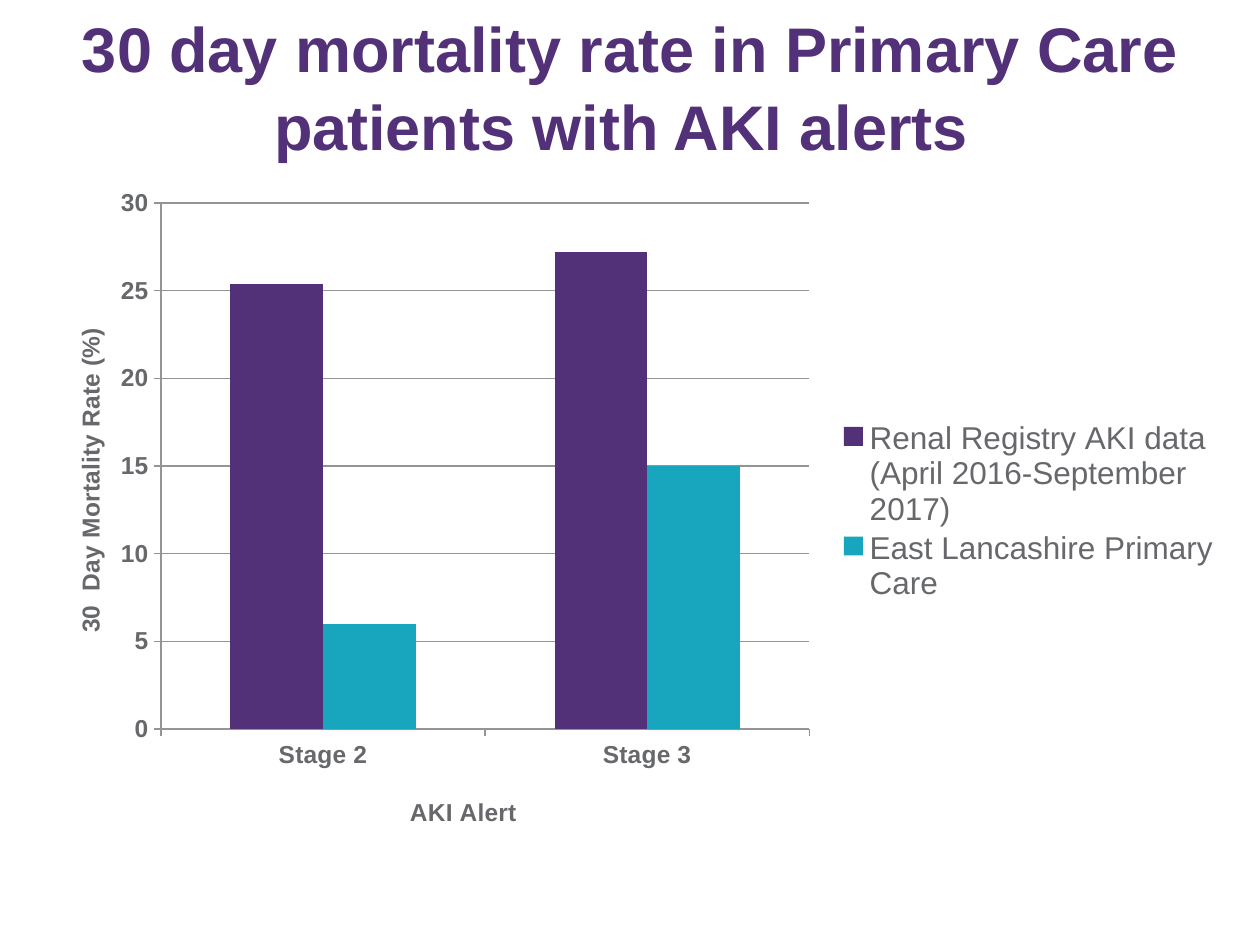
"""Build a slide comparing 30 day mortality after AKI alerts."""
from dataclasses import dataclass

from lxml import etree
from pptx import Presentation
from pptx.chart import data as chart_data
from pptx.dml.color import RGBColor
from pptx.enum import chart as chart_enum, text
from pptx.oxml.ns import qn
from pptx.util import Inches, Pt


@dataclass(frozen=True)
class Theme:
    purple: RGBColor = RGBColor.from_string("523178")
    teal: RGBColor = RGBColor.from_string("17A6BE")
    grey: RGBColor = RGBColor.from_string("67686B")
    rule: RGBColor = RGBColor.from_string("949494")
    face: str = "Arial"
    chart_face: str = "Calibri"
    title: int = 36
    legend: int = 18
    axis: int = 14
    chart: int = 10


@dataclass(frozen=True)
class Series:
    name: str
    values: tuple
    color: RGBColor


@dataclass(frozen=True)
class AxisLabel:
    wording: str
    left: float
    top: float


THEME = Theme()
STAGES = ("Stage 2", "Stage 3")
SERIES = (
    Series("Renal Registry AKI data (April 2016-September 2017)", (25.4, 27.2), THEME.purple),
    Series("East Lancashire Primary Care", (6, 15), THEME.teal),
)
ALERT_LABEL = AxisLabel("AKI Alert", 0.31, 0.92)
RATE_LABEL = AxisLabel("30  Day Mortality Rate (%)", 0.03, 0.22)


def style_font(font, size: int, color: RGBColor, bold: bool = False, face: str = THEME.face) -> None:
    """Apply face, size, weight and colour to a font."""
    font.name, font.size, font.bold = face, Pt(size), bold
    font.color.rgb = color


def place(element, target: str = "", **fractions: float) -> None:
    """Give a chart part a manual layout in fractions of the chart."""
    for old in element.findall(qn("c:layout")):
        element.remove(old)
    layout = etree.Element(qn("c:layout"))
    manual = etree.SubElement(layout, qn("c:manualLayout"))
    settings = {"layoutTarget": target} if target else {}
    settings.update(xMode="edge", yMode="edge", **fractions)
    for name, value in settings.items():
        etree.SubElement(manual, qn(f"c:{name}")).set("val", str(value))
    overlay = element.find(qn("c:overlay"))
    if overlay is None:
        element.insert(0, layout)
    else:
        overlay.addprevious(layout)


def style_axis(axis, label: AxisLabel) -> None:
    """Format an axis with its ticks and title."""
    style_font(axis.tick_labels.font, THEME.axis, THEME.grey, True)
    axis.major_tick_mark = chart_enum.XL_TICK_MARK.OUTSIDE
    axis.format.line.color.rgb = THEME.rule
    axis.format.line.width = Pt(0.75)
    title = axis.axis_title
    title.text_frame.text = label.wording
    style_font(title.text_frame.paragraphs[0].font, THEME.axis, THEME.grey, True)
    place(title._element, x=label.left, y=label.top)


def add_title(page) -> None:
    """Fill and position the slide title."""
    box = page.shapes.title
    box.left, box.top, box.width, box.height = map(Inches, (0.07, 0, 9.86, 0.88))
    frame = box.text_frame
    frame.text = "30 day mortality rate in Primary Care patients with AKI alerts "
    frame.word_wrap = True
    frame.auto_size = text.MSO_AUTO_SIZE.NONE
    frame.vertical_anchor = text.MSO_ANCHOR.TOP
    para = frame.paragraphs[0]
    para.alignment = text.PP_ALIGN.CENTER
    para.line_spacing = 1.04
    style_font(para.font, THEME.title, THEME.purple, True)


def add_mortality_chart(page) -> None:
    """Draw the clustered columns of mortality by alert stage."""
    figures = chart_data.CategoryChartData()
    figures.categories = STAGES
    for series in SERIES:
        figures.add_series(series.name, series.values)
    chart = page.shapes.add_chart(
        chart_enum.XL_CHART_TYPE.COLUMN_CLUSTERED,
        *map(Inches, (0.27, 1.4, 9.51, 5.31)), figures,
    ).chart
    chart.has_title = False
    style_font(chart.font, THEME.chart, THEME.grey, face=THEME.chart_face)
    plot = chart.plots[0]
    plot.gap_width, plot.overlap, plot.vary_by_categories = 150, 0, False
    for column, series in zip(plot.series, SERIES):
        column.format.fill.solid()
        column.format.fill.fore_color.rgb = series.color
    style_axis(chart.category_axis, ALERT_LABEL)
    rate_axis = chart.value_axis
    style_axis(rate_axis, RATE_LABEL)
    rate_axis.minimum_scale, rate_axis.maximum_scale, rate_axis.major_unit = 0, 30, 5
    rate_axis.has_major_gridlines = True
    rate_axis.major_gridlines.format.line.color.rgb = THEME.rule
    rate_axis.major_gridlines.format.line.width = Pt(0.75)
    chart.has_legend = True
    legend = chart.legend
    legend.position = chart_enum.XL_LEGEND_POSITION.RIGHT
    legend.include_in_layout = False
    style_font(legend.font, THEME.legend, THEME.grey)
    place(legend._element, x=0.67, y=0.36, w=0.32, h=0.28)
    plot_area = chart._chartSpace.find(".//" + qn("c:plotArea"))
    place(plot_area, "inner", x=0.106, y=0.04, w=0.541, h=0.786)


def main() -> None:
    """Assemble and save the deck."""
    deck = Presentation()
    deck.slide_width, deck.slide_height = Inches(10), Inches(7.5)
    page = deck.slides.add_slide(deck.slide_layouts.get_by_name("Title Only"))
    add_title(page)
    add_mortality_chart(page)
    deck.save("out.pptx")


if __name__ == "__main__":
    main()
